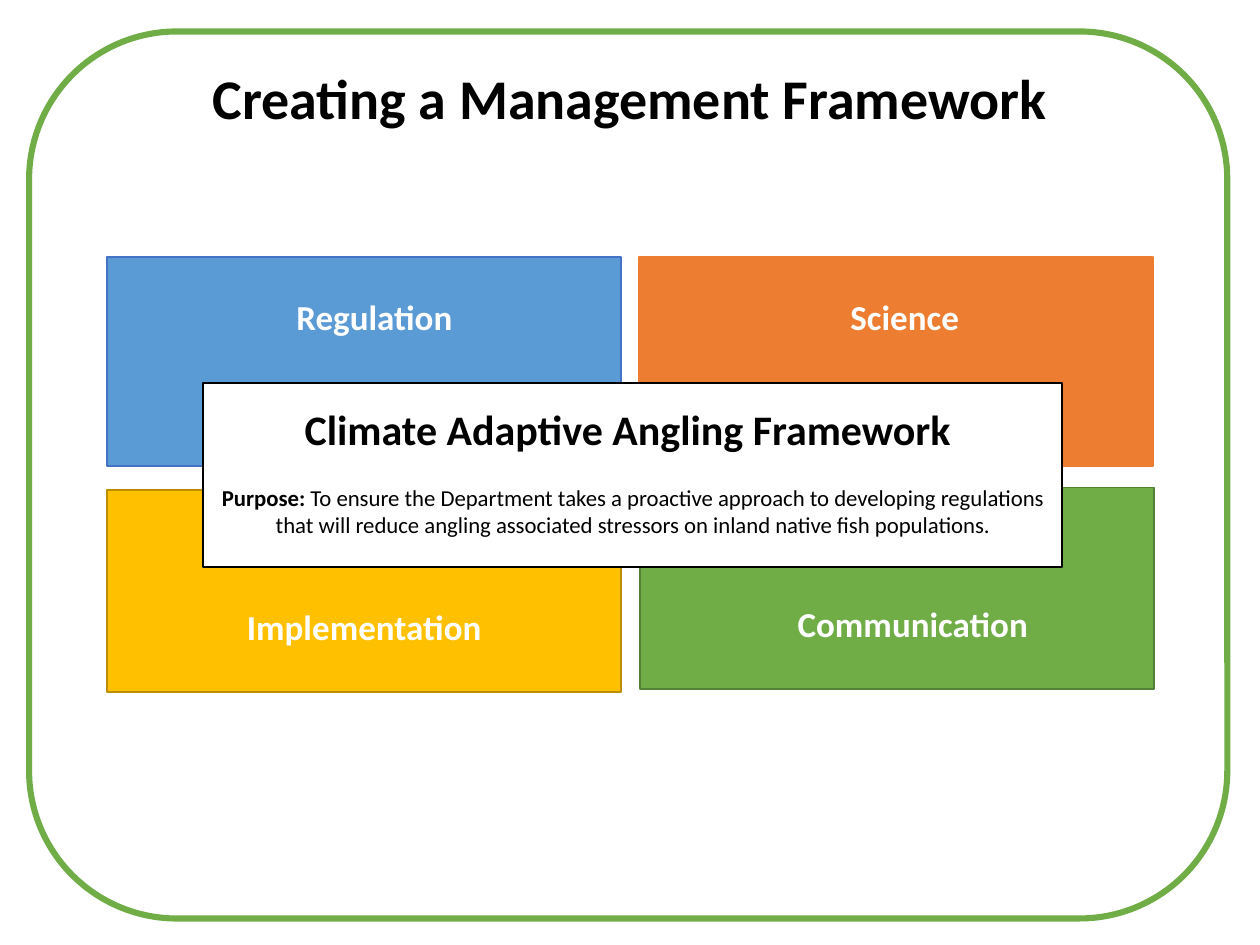
from pptx import Presentation
from pptx.dml.color import RGBColor
from pptx.enum.shapes import MSO_SHAPE
from pptx.enum.text import MSO_ANCHOR, MSO_AUTO_SIZE, PP_ALIGN
from pptx.util import Pt

RECTANGLE, ROUNDED = MSO_SHAPE.RECTANGLE, MSO_SHAPE.ROUNDED_RECTANGLE
TOP, CENTER, NO_AUTOFIT = MSO_ANCHOR.TOP, PP_ALIGN.CENTER, MSO_AUTO_SIZE.NONE

THEME = {
    "font": "Calibri",
    "white": "FFFFFF", "black": "000000",
    "blue": "5B9BD5", "blue_edge": "4472C4",
    "orange": "ED7D31",
    "green": "70AD47", "green_edge": "538035",
    "gold": "FFC000", "gold_edge": "BD8E00",
    "title": 32, "heading": 24, "label": 20, "purpose": 13,
}

presentation = Presentation()
presentation.slide_width, presentation.slide_height = Pt(720), Pt(540)
slide = presentation.slides.add_slide(presentation.slide_layouts[5])


def add_block(kind, box, fill, edge, width=1):
    shape = slide.shapes.add_shape(kind, *map(Pt, box))
    shape.shadow.inherit = False
    shape.fill.solid()
    shape.fill.fore_color.rgb = RGBColor.from_string(THEME[fill])
    shape.line.color.rgb = RGBColor.from_string(THEME[edge])
    shape.line.width = Pt(width)


def write_text(shape, paragraphs, color):
    """Each paragraph is (space before, size, [(text, bold), ...])."""
    frame = shape.text_frame
    for name, value in {"word_wrap": True, "auto_size": NO_AUTOFIT,
                        "vertical_anchor": TOP}.items():
        setattr(frame, name, value)
    for index, (space, size, runs) in enumerate(paragraphs):
        paragraph = frame.add_paragraph() if index else frame.paragraphs[0]
        paragraph.alignment = CENTER
        paragraph.space_before = Pt(space)
        for text, bold in runs:
            run = paragraph.add_run()
            run.text = text
            for name, value in {"name": THEME["font"], "size": Pt(THEME[size]),
                                "bold": bold}.items():
                setattr(run.font, name, value)
            run.font.color.rgb = RGBColor.from_string(THEME[color])


# Rounded frame around the slide
add_block(ROUNDED, (16.6, 18, 684.7, 506.9), "white", "green", 3.5)

# Four quadrants: label, box, fill, edge, label box
BLOCK_WIDTH = 293.8
quadrants = [
    ("Regulation", (61.2, 146.9, BLOCK_WIDTH, 119.5), "blue", "blue_edge",
     (67, 165.6, BLOCK_WIDTH, 31.7)),
    ("Science", (365, 146.9, BLOCK_WIDTH, 119.5), "orange", "orange",
     (370.1, 165.6, BLOCK_WIDTH, 31.7)),
    ("Communication", (365.8, 278.6, BLOCK_WIDTH, 115.2), "green", "green_edge",
     (372.2, 340.6, 298.8, 31.7)),
    ("Implementation", (61.2, 280.1, BLOCK_WIDTH, 115.2), "gold", "gold_edge",
     (61.2, 342.7, BLOCK_WIDTH, 31.7)),
]
for label, box, fill, edge, label_box in quadrants:
    add_block(RECTANGLE, box, fill, edge)
    text_box = slide.shapes.add_textbox(*map(Pt, label_box))
    write_text(text_box, [(0, "label", [(label, True)])], "white")

# Central panel
PANEL_LEFT, PANEL_WIDTH = 115.9, 491
add_block(RECTANGLE, (PANEL_LEFT, 218.9, PANEL_WIDTH, 105.1), "white", "black")
panel_text = slide.shapes.add_textbox(
    Pt(PANEL_LEFT), Pt(226.8), Pt(PANEL_WIDTH), Pt(85))
write_text(panel_text, [
    (0, "heading", [("Climate Adaptive Angling Framework ", True)]),
    (17, "purpose", [
        ("Purpose: ", True),
        ("To ensure the Department takes a proactive approach to developing "
         "regulations that will reduce angling associated stressors on inland "
         "native fish populations.", False)]),
], "black")

# Title, brought in front of the frame
title = slide.shapes.title
for name, value in {"left": 0, "top": 32.4, "width": 720, "height": 46}.items():
    setattr(title, name, Pt(value))
write_text(title, [(0, "title", [("Creating a Management Framework", True)])], "black")
slide.shapes._spTree.append(title._element)

presentation.save("out.pptx")
